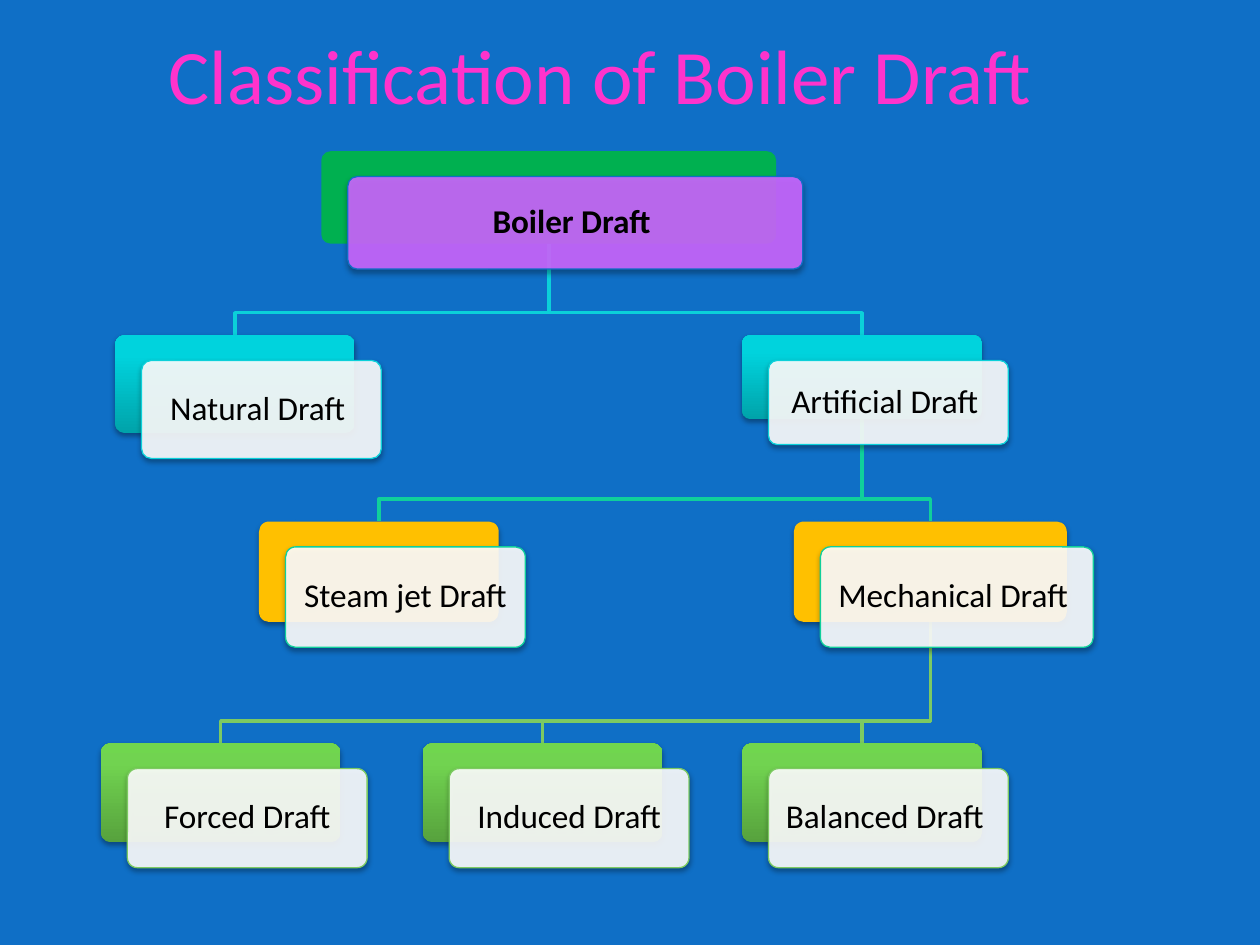
from copy import deepcopy

from lxml.etree import SubElement
from pptx import Presentation
from pptx.dml.color import RGBColor
from pptx.enum.shapes import MSO_SHAPE
from pptx.enum.text import MSO_ANCHOR, PP_ALIGN
from pptx.oxml.ns import qn
from pptx.util import Pt

BLUE = RGBColor(0x0F, 0x6F, 0xC6)
PINK = RGBColor(0xFF, 0x33, 0xCC)
GREEN = RGBColor(0x00, 0xB0, 0x50)
PURPLE = RGBColor(0xCC, 0x66, 0xFF)
CYAN = RGBColor(0x0B, 0xD0, 0xD9)
TEAL = RGBColor(0x10, 0xCF, 0x9B)
LIME = RGBColor(0x7C, 0xCA, 0x62)
GOLD = RGBColor(0xFF, 0xC0, 0x00)
WHITE = RGBColor(0xFF, 0xFF, 0xFF)
BLACK = RGBColor(0, 0, 0)
CYAN_STOPS = (RGBColor(0x00, 0xA3, 0xAA), RGBColor(0x00, 0xD3, 0xDD), RGBColor(0x00, 0xD4, 0xDE))
LIME_STOPS = (RGBColor(0x57, 0xA2, 0x3D), RGBColor(0x71, 0xD3, 0x50), RGBColor(0x70, 0xD6, 0x4E))
STOP_POSITIONS = (0, 0.8, 1)

TITLE = "Classification of Boiler Draft "
# Each level: top of its back cards, their fill, front fill, line colour
LEVELS = [
    dict(top=86.4, back=GREEN, front=PURPLE, line=BLUE, back_shadow=False, bold=True),
    dict(top=191.5, back=CYAN_STOPS, front=WHITE, line=CYAN, back_shadow=True, bold=False),
    dict(top=298, back=GOLD, front=WHITE, line=TEAL, back_shadow=True, bold=False),
    dict(top=424.7, back=LIME_STOPS, front=WHITE, line=LIME, back_shadow=True, bold=False),
]
# text: (level, left, width, height, parent)
NODES = {
    "Boiler Draft ": (0, 183.6, 260, 52.8, None),
    "Natural Draft ": (1, 65.7, 137, 56, "Boiler Draft "),
    "Artificial Draft ": (1, 424, 137, 48, "Boiler Draft "),
    "Steam jet Draft": (2, 148, 137, 57.4, "Artificial Draft "),
    "Mechanical Draft ": (2, 453.6, 156, 57.4, "Artificial Draft "),
    "Forced Draft": (3, 57.6, 137, 56.6, "Mechanical Draft "),
    "Induced Draft": (3, 241.5, 137, 56.6, "Mechanical Draft "),
    "Balanced Draft ": (3, 424, 137, 56.6, "Mechanical Draft "),
}
OFFSET_X, OFFSET_Y = 15.2, 14.5  # front card relative to back card
ELBOW_RISE = 12.8  # height of a connector's bend above the child


def set_format(target, **values):
    for name, value in values.items():
        setattr(target, name, value)


def write(shape, text, size, color, bold=False, spacing=1.0, inset=Pt(6)):
    frame = shape.text_frame
    set_format(frame, word_wrap=True, vertical_anchor=MSO_ANCHOR.MIDDLE, margin_left=inset,
               margin_right=inset, margin_top=inset, margin_bottom=inset)
    paragraph = frame.paragraphs[0]
    set_format(paragraph, alignment=PP_ALIGN.CENTER, line_spacing=spacing)
    run = paragraph.add_run()
    run.text = text
    set_format(run.font, name="Calibri", size=Pt(size), bold=bold)
    run.font.color.rgb = color


def add_child(parent, tag, **attributes):
    child = SubElement(parent, qn(tag))
    for name, value in attributes.items():
        child.set(name, str(value))
    return child


def fill_gradient(shape, colors):
    """Fill from bottom to top, with one stop per colour."""
    shape.fill.gradient()
    shape.fill.gradient_angle = 90
    stop_list = shape._element.spPr.find(".//" + qn("a:gsLst"))
    stop_list.append(deepcopy(stop_list[0]))
    for stop, color, position in zip(shape.fill.gradient_stops, colors, STOP_POSITIONS):
        stop.color.rgb = color
        stop.position = position


def add_card(shapes, left, top, width, height, fill, line=None, shadow=True):
    card = shapes.add_shape(MSO_SHAPE.ROUNDED_RECTANGLE, Pt(left), Pt(top), Pt(width), Pt(height))
    card.adjustments[0] = 0.1
    if isinstance(fill, RGBColor):
        card.fill.solid()
        card.fill.fore_color.rgb = fill
    else:
        fill_gradient(card, fill)
    if line is None:
        card.line.fill.background()
    else:
        card.line.color.rgb = line
        card.line.width = Pt(0.75)
    card.shadow.inherit = False
    if shadow:
        effects = card._element.spPr.find(qn("a:effectLst"))
        outer = add_child(effects, "a:outerShdw", blurRad=Pt(3.1), dist=Pt(1.8),
                          dir=90 * 60000, rotWithShape=0)
        add_child(add_child(outer, "a:srgbClr", val=BLACK), "a:alpha", val=35000)
    return card


def add_elbow(shapes, parent, child):
    level, left, width, height, _ = parent
    start_x, start_y = left + width / 2, LEVELS[level]["top"] + height
    level, left, width, _, _ = child
    end_x, end_y = left + width / 2, LEVELS[level]["top"]
    bend = end_y - ELBOW_RISE
    builder = shapes.build_freeform(Pt(start_x), Pt(start_y))
    builder.add_line_segments(
        [(Pt(x), Pt(y)) for x, y in ((start_x, bend), (end_x, bend), (end_x, end_y))], close=False)
    elbow = builder.convert_to_shape()
    elbow.fill.background()
    elbow.line.color.rgb = LEVELS[level]["line"]
    elbow.line.width = Pt(2)
    elbow.shadow.inherit = False


def add_node(shapes, text, node):
    level, left, width, height, _ = node
    style = LEVELS[level]
    add_card(shapes, left, style["top"], width, height, style["back"], shadow=style["back_shadow"])
    front = add_card(shapes, left + OFFSET_X, style["top"] + OFFSET_Y, width, height,
                     style["front"], style["line"])
    color = front._element.spPr.find(qn("a:solidFill"))[0]
    add_child(color, "a:alpha", val=90000)
    write(front, text, 19, BLACK, style["bold"], 0.9)


def main():
    presentation = Presentation()
    set_format(presentation, slide_width=Pt(720), slide_height=Pt(540))
    slide = presentation.slides.add_slide(presentation.slide_layouts[6])
    slide.background.fill.solid()
    slide.background.fill.fore_color.rgb = BLUE
    shapes = slide.shapes

    title = shapes.add_textbox(Pt(90), Pt(6), Pt(516), Pt(72))
    write(title, TITLE, 44, PINK)
    for node in reversed(NODES.values()):
        if node[-1]:
            add_elbow(shapes, NODES[node[-1]], node)
    for text, node in NODES.items():
        add_node(shapes, text, node)
    presentation.save("out.pptx")


if __name__ == "__main__":
    main()
